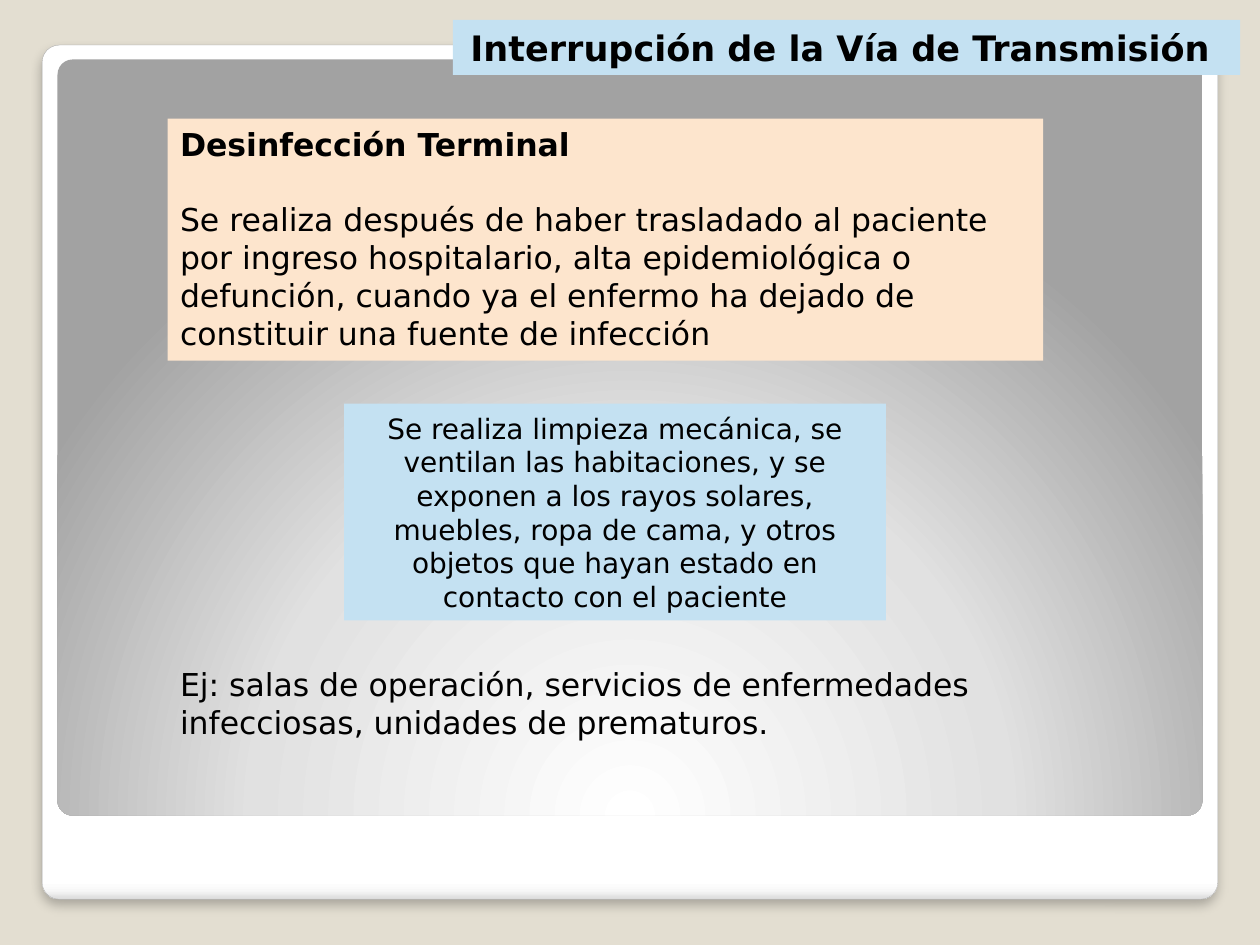
from lxml import etree
from pptx import Presentation
from pptx.dml.color import RGBColor
from pptx.enum.shapes import MSO_SHAPE as Kind
from pptx.enum.text import MSO_ANCHOR as Anchor, MSO_AUTO_SIZE as Fit, PP_ALIGN as Align
from pptx.oxml.ns import qn
from pptx.util import Cm, Pt

SAND = RGBColor(0xE3, 0xDE, 0xD1)
PEACH = RGBColor(0xFD, 0xE5, 0xCD)
SKY = RGBColor(0xC4, 0xE1, 0xF2)
EDGE = RGBColor(0xA4, 0xA4, 0xA4)
BLACK = RGBColor(0, 0, 0)
WHITE = RGBColor(0xFF, 0xFF, 0xFF)
PEARL = RGBColor(0xF7, 0xF7, 0xF7)
SILVER = RGBColor(0xDA, 0xDA, 0xDA)
MIST = RGBColor(0xE1, 0xE1, 0xE1)
GRAY = RGBColor(0xA2, 0xA2, 0xA2)
FONT = "DejaVu Sans"


def add_node(up, tag, **attrs):
    node = etree.SubElement(up, qn(tag))
    for key, val in attrs.items():
        node.set(key, str(val))
    return node


def add_card(slide, box, stops):
    """Add a rounded card and return it with its open gradient fill."""
    card = slide.shapes.add_shape(Kind.ROUNDED_RECTANGLE, *map(Cm, box))
    card.adjustments[0] = 0.02
    card.shadow.inherit = False
    card.line.fill.background()
    card.fill.background()
    grad = etree.Element(qn("a:gradFill"), rotWithShape="1")
    blank = card.element.spPr.find(qn("a:noFill"))
    blank.getparent().replace(blank, grad)
    steps = add_node(grad, "a:gsLst")
    for place, color in stops:
        stop = add_node(steps, "a:gs", pos=place * 1000)
        add_node(stop, "a:srgbClr", val=color)
    return card, grad


def add_frame(slide, box):
    """Draw the white card and the gray panel inset at its top."""
    x, y, w, h = box
    card, grad = add_card(
        slide, box, [(0, WHITE), (98, WHITE), (99, PEARL), (100, SILVER)])
    add_node(grad, "a:lin", ang=5400000, scaled=0)
    card.line.color.rgb = EDGE
    card.line.width = Pt(0.16)
    glow = add_node(card.element.spPr.find(qn("a:effectLst")), "a:outerShdw",
                    blurRad=Pt(6), dist=Pt(4), dir=5400000, rotWithShape=0)
    shade = add_node(glow, "a:srgbClr", val=BLACK)
    add_node(shade, "a:alpha", val=25000)

    # Radial light rising from the panel's foot
    inset = 0.31
    panel = (x + inset, y + 0.29, w - 2 * inset, h - 1.98)
    _, grad = add_card(slide, panel, [(0, WHITE), (55, MIST), (100, GRAY)])
    way = add_node(grad, "a:path", path="circle")
    add_node(way, "a:fillToRect", l=50000, t=175000, r=50000, b=-75000)


def add_note(slide, box, lines, size, fill=None, align=Align.LEFT,
             anchor=Anchor.TOP):
    """Add a text block; lines holds (text, bold, space before)."""
    place = map(Cm, box)
    if fill is None:
        note = slide.shapes.add_textbox(*place)
    else:
        note = slide.shapes.add_shape(Kind.RECTANGLE, *place)
        note.shadow.inherit = False
        note.fill.solid()
        note.fill.fore_color.rgb = fill
        note.line.fill.background()
    frame = note.text_frame
    frame.word_wrap = True
    frame.auto_size = Fit.SHAPE_TO_FIT_TEXT
    frame.vertical_anchor = anchor
    for i, (text, bold, gap) in enumerate(lines):
        para = frame.add_paragraph() if i else frame.paragraphs[0]
        para.text = text
        para.alignment = align
        para.space_before = Pt(gap)
        font = para.font
        font.name, font.size, font.bold = FONT, Pt(size), bold
        font.color.rgb = BLACK


def add_body(slide, box):
    """Stack the definition, the method and the examples."""
    x, y, w, h = box
    add_note(slide, (x, y, w, 4.88), [
        ("Desinfección Terminal", True, 0),
        ("Se realiza después de haber trasladado al paciente por ingreso "
         "hospitalario, alta epidemiológica o defunción, cuando ya el enfermo "
         "ha dejado de constituir una fuente de infección", False, 21.5),
    ], 18, PEACH)
    add_note(slide, (x + 3.56, y + 5.75, 10.92, 4.37), [
        ("Se realiza limpieza mecánica, se ventilan las habitaciones, y se "
         "exponen a los rayos solares, muebles, ropa de cama, y otros objetos "
         "que hayan estado en contacto con el paciente", False, 0),
    ], 16, SKY, Align.CENTER, Anchor.MIDDLE)
    add_note(slide, (x, y + h - 1.8, w - 0.58, 1.8), [
        ("Ej: salas de operación, servicios de enfermedades infecciosas, "
         "unidades de prematuros.", False, 0),
    ], 18)


def main():
    deck = Presentation()
    deck.slide_width, deck.slide_height = Cm(25.4), Cm(19.05)
    slide = deck.slides.add_slide(deck.slide_layouts[6])
    back = slide.background.fill
    back.solid()
    back.fore_color.rgb = SAND

    add_frame(slide, (0.85, 0.91, 23.7, 17.22))
    add_body(slide, (3.38, 2.39, 17.65, 12.7))
    # Title strip
    add_note(slide, (9.13, 0.4, 15.87, 1.11),
             [("Interrupción de la Vía de Transmisión ", True, 0)],
             20, SKY, Align.CENTER)
    deck.save("out.pptx")


if __name__ == "__main__":
    main()
